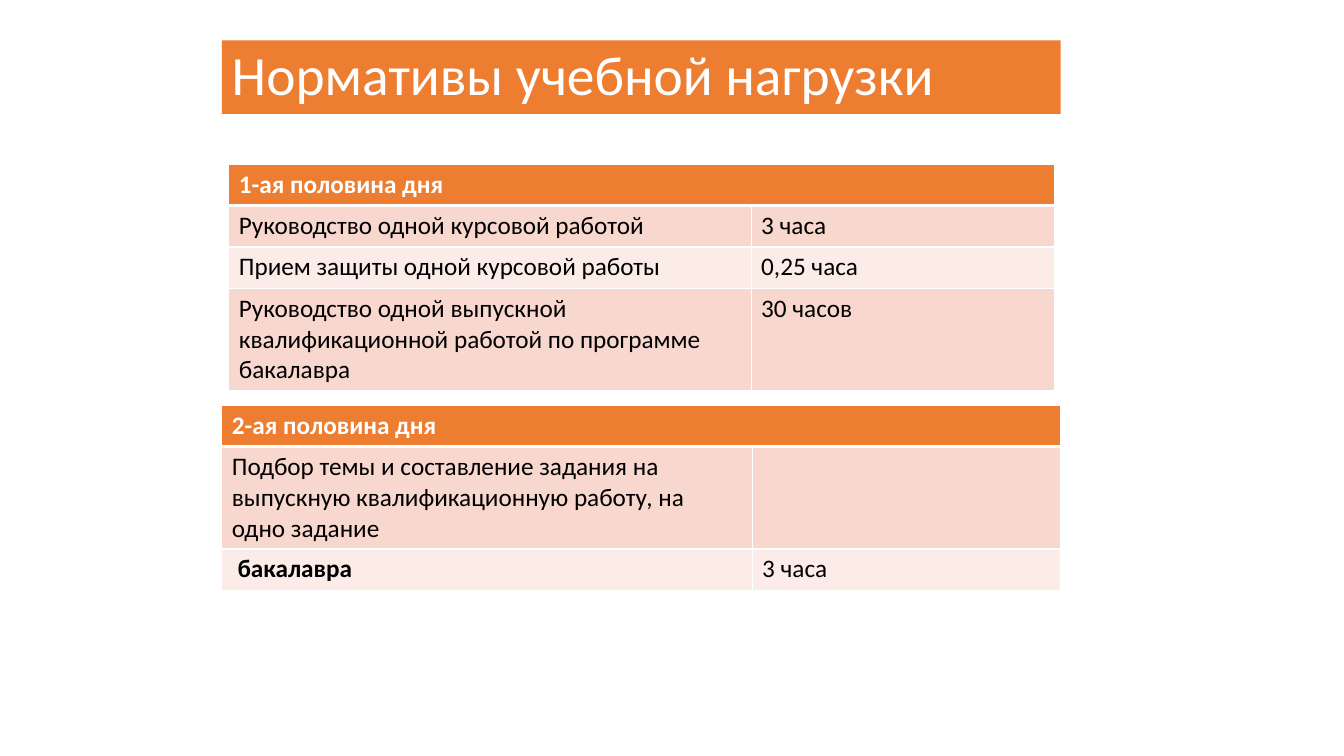
from dataclasses import dataclass

from lxml.etree import SubElement
from pptx import Presentation
from pptx.dml.color import RGBColor
from pptx.enum.shapes import MSO_SHAPE as Shape
from pptx.enum.text import MSO_ANCHOR as Anchor, PP_ALIGN as Align
from pptx.oxml.ns import qn
from pptx.util import Inches, Pt


@dataclass(frozen=True)
class Theme:
    """Colours, font and type sizes of the slide."""
    accent: str = "ED7D31"
    band_dark: str = "F8D7CE"
    band_light: str = "FCECE8"
    white: str = "FFFFFF"
    black: str = "000000"
    font: str = "Calibri"
    title_size: float = 39.6
    body_size: float = 18
    rule: float = 1
    header_rule: float = 3


THEME = Theme()
LINE_ROW, TALL_ROW = 0.41, 1.01

FIRST_HALF = [
    ("Руководство одной курсовой работой", "3 часа", LINE_ROW),
    ("Прием защиты одной курсовой работы", "0,25 часа", LINE_ROW),
    ("Руководство одной выпускной квалификационной работой "
     "по программе бакалавра", "30 часов", TALL_ROW),
]
SECOND_HALF = [
    ("Подбор темы и составление задания на выпускную "
     "квалификационную работу, на одно задание", "", TALL_ROW),
    (" бакалавра", "3 часа", LINE_ROW),
]
BOLD_LABELS = {" бакалавра"}


def paint(target, colour):
    """Give a shape or cell a solid fill."""
    target.fill.solid()
    target.fill.fore_color.rgb = RGBColor.from_string(colour)


def write(para, text, size, colour, bold=False):
    """Add one formatted span to a paragraph."""
    span = para.add_run()
    span.text = text
    for name, value in {"name": THEME.font, "size": Pt(size), "bold": bold}.items():
        setattr(span.font, name, value)
    span.font.color.rgb = RGBColor.from_string(colour)


def add_borders(cell, bottom):
    """Draw white borders on a cell, with its own bottom width."""
    widths = {"lnL": THEME.rule, "lnR": THEME.rule, "lnT": THEME.rule, "lnB": bottom}
    properties = cell._tc.get_or_add_tcPr()
    for tag, width in widths.items():
        line = SubElement(properties, qn(f"a:{tag}"), w=str(Pt(width)))
        fill = SubElement(line, qn("a:solidFill"))
        SubElement(fill, qn("a:srgbClr"), val=THEME.white)


def fill_cell(cell, text, background, colour, bold=False, bottom=THEME.rule):
    """Style one table cell and write its text."""
    add_borders(cell, bottom)
    paint(cell, background)
    if text:
        write(cell.text_frame.paragraphs[0], text, THEME.body_size, colour, bold)


def add_title(page, box, text):
    """Place the title band in the given box."""
    band = page.shapes.add_shape(Shape.RECTANGLE, *map(Inches, box))
    band.shadow.inherit = False
    paint(band, THEME.accent)
    band.line.fill.background()
    frame = band.text_frame
    for name, value in {"word_wrap": True, "vertical_anchor": Anchor.MIDDLE}.items():
        setattr(frame, name, value)
    para = frame.paragraphs[0]
    for name, value in {"alignment": Align.LEFT, "line_spacing": 0.9}.items():
        setattr(para, name, value)
    write(para, text, THEME.title_size, THEME.white)


def add_norms(page, box, label_width, heading, norms):
    """Place a table of workload norms under a merged heading."""
    left, top, width = box
    heights = [LINE_ROW] + [height for _, _, height in norms]
    frame = page.shapes.add_table(
        len(heights), 2, *map(Inches, (left, top, width, sum(heights))))
    table = frame.table
    for column, size in zip(table.columns, (label_width, width - label_width)):
        column.width = Inches(size)
    for row, height in zip(table.rows, heights):
        row.height = Inches(height)
    for column, text in enumerate((heading, "")):
        fill_cell(table.cell(0, column), text, THEME.accent, THEME.white,
                  True, THEME.header_rule)
    table.cell(0, 0).merge(table.cell(0, 1))
    for index, (label, hours, _) in enumerate(norms, start=1):
        band = THEME.band_dark if index % 2 else THEME.band_light
        for column, text in enumerate((label, hours)):
            fill_cell(table.cell(index, column), text, band, THEME.black,
                      text in BOLD_LABELS)


def main():
    """Build the slide and save the deck."""
    deck = Presentation()
    deck.slide_width, deck.slide_height = Inches(13.33), Inches(7.5)
    page = deck.slides.add_slide(deck.slide_layouts[6])
    add_title(page, (2.2, 0.4, 8.32, 0.73), "Нормативы учебной нагрузки")
    add_norms(page, (2.27, 1.63, 8.19), 5.18, "1-ая половина дня", FIRST_HALF)
    add_norms(page, (2.2, 4.02, 8.32), 5.26, "2-ая половина дня", SECOND_HALF)
    deck.save("out.pptx")


if __name__ == "__main__":
    main()
